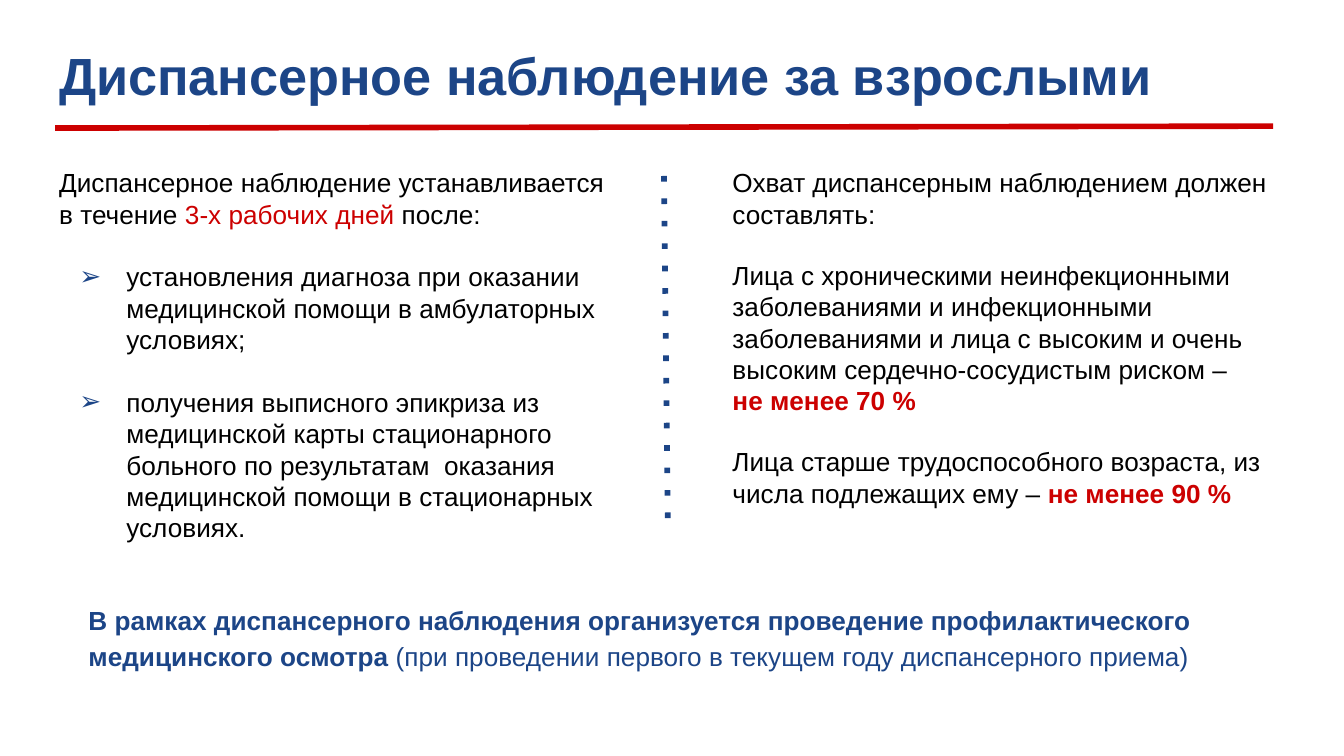
from lxml import etree
from pptx import Presentation
from pptx.dml.color import RGBColor
from pptx.enum import shapes, text
from pptx.oxml import ns
from pptx.util import Pt

COLORS = {"blue": "1C4587", "red": "CC0000", "black": "000000"}


def write(para, words, size=14, color="black", bold=False):
    span = para.add_run()
    span.text = words
    span.font.name = "Arial"
    span.font.size = Pt(size)
    span.font.bold = bold
    span.font.color.rgb = RGBColor.from_string(COLORS[color])


def add_paragraph(box, first=False, before=0, after=0, bullet=None):
    """Return a left-aligned paragraph, with a hanging bullet if one is given."""
    frame = box.text_frame
    para = frame.paragraphs[0] if first else frame.add_paragraph()
    para.alignment = text.PP_ALIGN.LEFT
    para.line_spacing = 1.0
    para.space_before, para.space_after = Pt(before), Pt(after)
    props = para._p.get_or_add_pPr()
    props.set("marL", str(Pt(36) if bullet else 0))
    props.set("indent", str(Pt(-25.2) if bullet else 0))
    if bullet:
        tint = etree.SubElement(props, ns.qn("a:buClr"))
        etree.SubElement(tint, ns.qn("a:srgbClr"), val=COLORS["blue"])
        etree.SubElement(props, ns.qn("a:buFont"), typeface="Arial")
        etree.SubElement(props, ns.qn("a:buChar"), char=bullet)
    else:
        etree.SubElement(props, ns.qn("a:buNone"))
    return para


deck = Presentation()
deck.slide_width, deck.slide_height = Pt(720), Pt(405)
page = deck.slides.add_slide(deck.slide_layouts[3])
title, left, right = page.placeholders
note = page.shapes.add_textbox(0, 0, 0, 0)

# Text areas
for box, area in (
    (title, (24.5, 15.8, 671, 45.4)),
    (left, (24.5, 82, 314.6, 219)),
    (right, (385.2, 82, 325.4, 213)),
    (note, (40.3, 314, 685.4, 68.4)),
):
    box.left, box.top, box.width, box.height = map(Pt, area)
    frame = box.text_frame
    frame.word_wrap = True
    frame.auto_size = text.MSO_AUTO_SIZE.NONE
    frame.vertical_anchor = text.MSO_ANCHOR.TOP
    frame.margin_left = frame.margin_right = Pt(7.2)
    frame.margin_top = frame.margin_bottom = Pt(7.2)

write(add_paragraph(title, first=True), "Диспансерное наблюдение за взрослыми",
      size=28, color="blue", bold=True)

# Left column: when observation starts
para = add_paragraph(left, first=True)
write(para, "Диспансерное наблюдение устанавливается в течение ")
write(para, "3-х рабочих дней", color="red")
write(para, " после:")
for reason in (
    "установления диагноза при оказании медицинской помощи в амбулаторных условиях;",
    "получения выписного эпикриза из медицинской карты стационарного больного "
    "по результатам  оказания медицинской помощи в стационарных условиях.",
):
    write(add_paragraph(left, before=16.8, bullet="➢"), reason)

# Right column: required coverage
write(add_paragraph(right, first=True),
      "Охват диспансерным наблюдением должен составлять:")
para = add_paragraph(right, before=16)
write(para, "Лица с хроническими неинфекционными заболеваниями и инфекционными "
      "заболеваниями и лица с высоким и очень высоким сердечно-сосудистым риском –")
para.add_line_break()
write(para, "не менее 70 %", color="red", bold=True)
para = add_paragraph(right, before=16, after=16)
write(para, "Лица старше трудоспособного возраста, из числа подлежащих ему – ")
write(para, "не менее 90 %", color="red", bold=True)

# Closing note
para = add_paragraph(note, first=True, after=16)
para.line_spacing = 1.15
write(para, "В рамках диспансерного наблюдения организуется проведение "
      "профилактического медицинского осмотра", color="blue", bold=True)
write(para, " (при проведении первого в текущем году диспансерного приема)", color="blue")

# Title rule and column divider
for ends, color, dash in (
    ((29.5, 68.6, 682, 67.6), "red", "solid"),
    ((355.7, 94.3, 357.8, 283), "blue", "dot"),
):
    rule = page.shapes.add_connector(shapes.MSO_CONNECTOR.STRAIGHT, *map(Pt, ends))
    rule.line.color.rgb = RGBColor.from_string(COLORS[color])
    rule.line.width = Pt(3)
    outline = rule.line._get_or_add_ln()
    etree.SubElement(outline, ns.qn("a:prstDash"), val=dash)
    etree.SubElement(rule._element.spPr, ns.qn("a:effectLst"))

deck.save("out.pptx")
